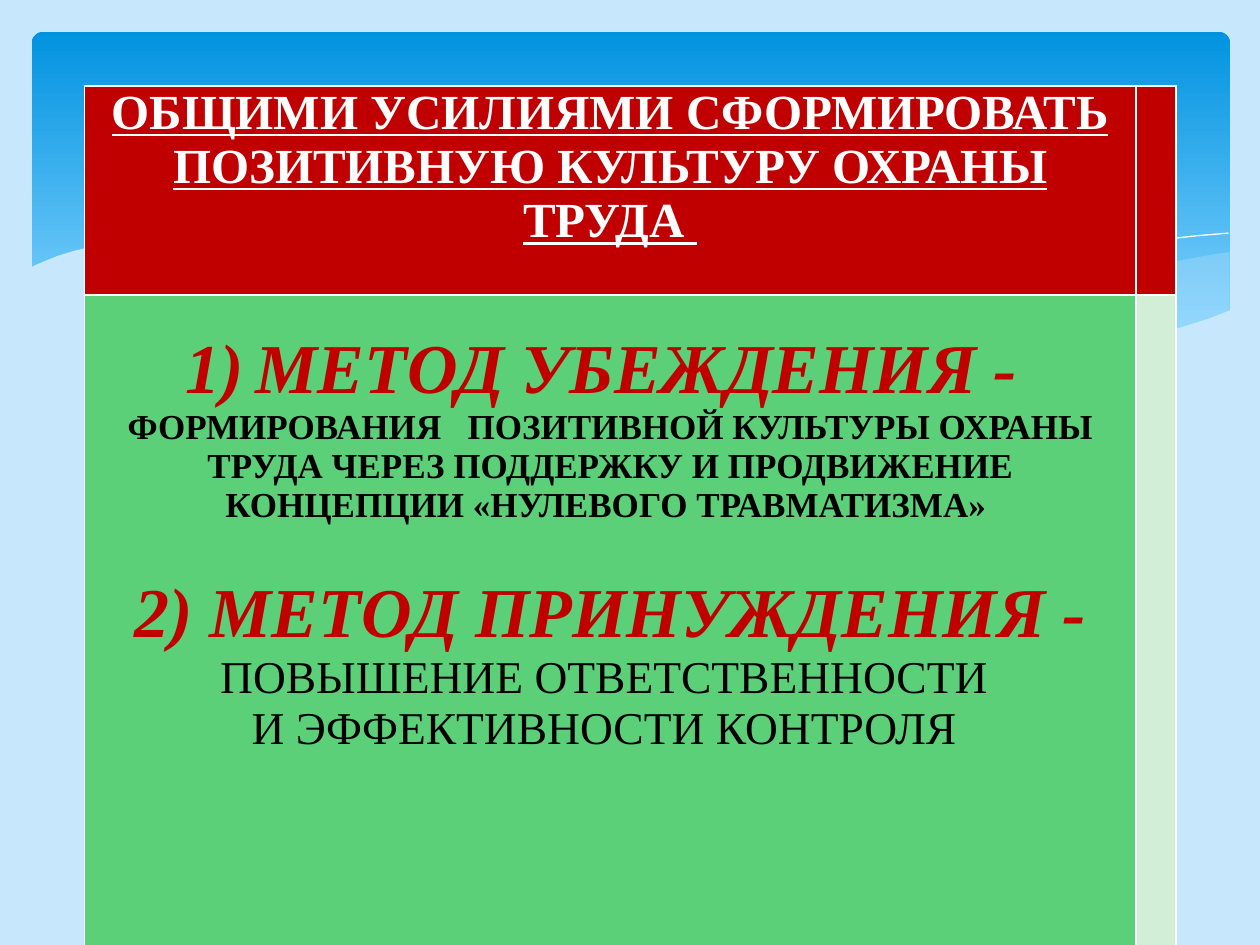
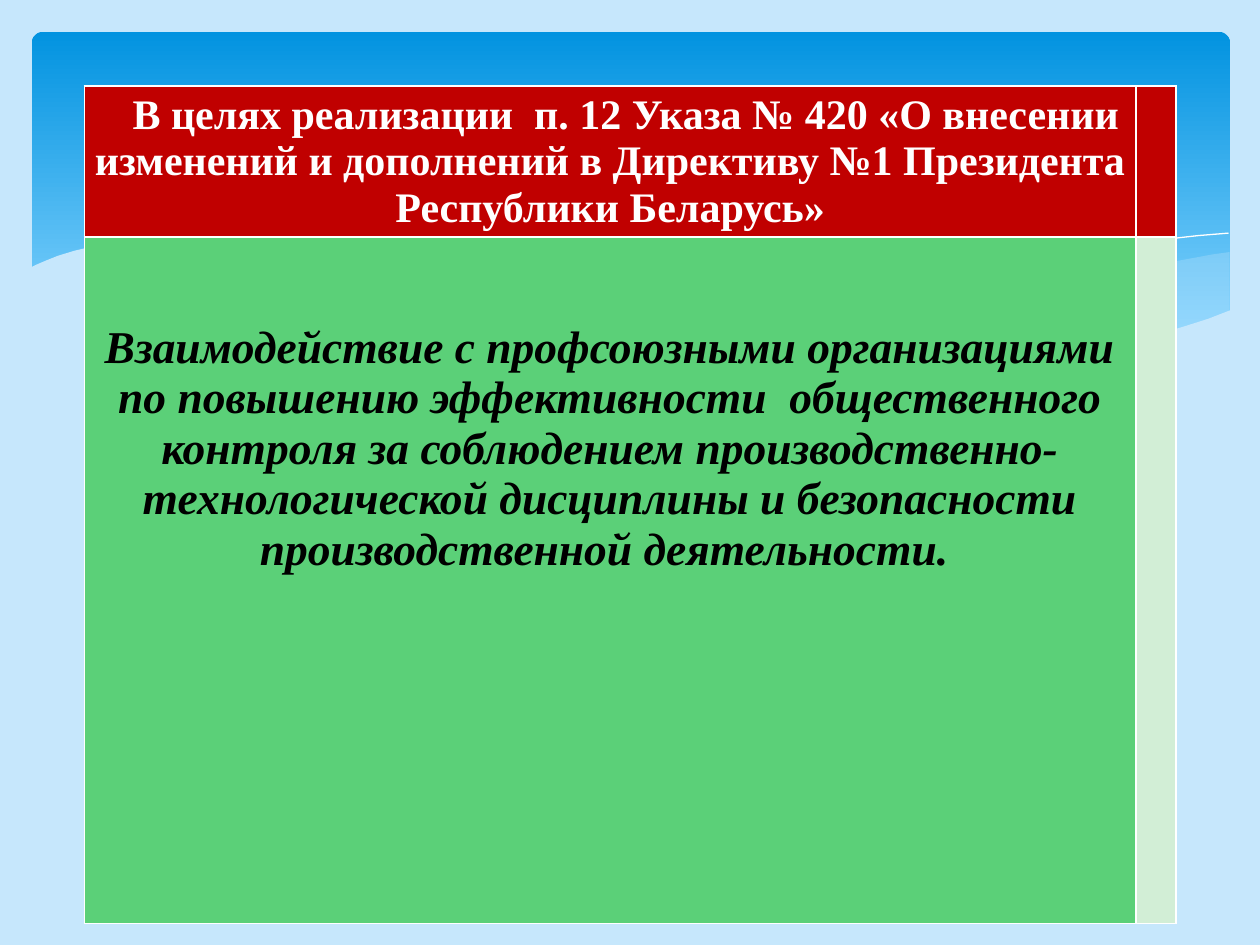
from dataclasses import dataclass

from lxml.etree import SubElement
from pptx import Presentation
from pptx.dml.color import RGBColor
from pptx.enum.shapes import MSO_SHAPE
from pptx.enum.text import MSO_ANCHOR, PP_ALIGN
from pptx.oxml import parse_xml
from pptx.oxml.ns import nsdecls, qn
from pptx.util import Cm, Pt


@dataclass(frozen=True)
class Theme:
    font: str = "Times New Roman"
    sky: str = "C6E7FC"
    band_top: str = "0293E0"
    band_bottom: str = "83D3FE"
    white: str = "FFFFFF"
    black: str = "000000"
    red: str = "C00000"
    green: str = "5BD078"
    pale_green: str = "D2EED6"
    method_size: int = 40
    heading_size: int = 28
    body_size: int = 26
    decree_size: int = 24
    detail_size: int = 20
    border: int = 1


THEME = Theme()

HEADING = dict(size=THEME.heading_size, color=THEME.white, bold=True, underline=True)
DECREE = dict(size=THEME.decree_size, color=THEME.white, bold=True)
METHOD = dict(size=THEME.method_size, color=THEME.red, bold=True, italic=True)
DETAIL = dict(size=THEME.detail_size, color=THEME.black, bold=True)
BODY = dict(size=THEME.body_size, color=THEME.black)
STATEMENT = dict(size=THEME.body_size, color=THEME.black, bold=True, italic=True)

SLIDES = [
    dict(
        row_heights=(4.22, 13.84),
        body_top=0.72,
        heading=[("ОБЩИМИ УСИЛИЯМИ СФОРМИРОВАТЬ ПОЗИТИВНУЮ КУЛЬТУРУ ОХРАНЫ ТРУДА ", HEADING, {})],
        heading_anchor=MSO_ANCHOR.TOP,
        body=[
            ("МЕТОД УБЕЖДЕНИЯ - ", METHOD, dict(left=1.42, first_line=-1.42, numbered=True)),
            ("ФОРМИРОВАНИЯ   ПОЗИТИВНОЙ КУЛЬТУРЫ ОХРАНЫ ТРУДА ЧЕРЕЗ ПОДДЕРЖКУ И ПРОДВИЖЕНИЕ "
             "КОНЦЕПЦИИ «НУЛЕВОГО ТРАВМАТИЗМА» ", DETAIL, {}),
            ("2) МЕТОД ПРИНУЖДЕНИЯ -", METHOD, dict(space_before=29)),
            ("ПОВЫШЕНИЕ ОТВЕТСТВЕННОСТИ ", BODY, {}),
            ("И ЭФФЕКТИВНОСТИ КОНТРОЛЯ ", BODY, {}),
        ],
    ),
    dict(
        row_heights=(3.05, 13.84),
        body_top=1.73,
        heading=[("В целях реализации  п. 12 Указа № 420 «О внесении изменений и дополнений "
                  "в Директиву №1 Президента Республики Беларусь»", DECREE, dict(first_line=0.63))],
        heading_anchor=MSO_ANCHOR.MIDDLE,
        body=[
            ("Взаимодействие с профсоюзными организациями по повышению эффективности  общественного "
             "контроля за соблюдением производственно-технологической дисциплины и безопасности "
             "производственной деятельности. ", STATEMENT, {}),
        ],
    ),
]

WAVE_UNIT = Cm(0.0254)
WAVES = [
    dict(fill=THEME.sky, opacity=29, points=[
        (976, 200), (962, 202), (935, 207), (906, 213), (876, 220), (832, 230), (779, 242),
        (729, 253), (683, 262), (661, 265), (691, 269), (719, 272), (745, 275), (769, 277),
        (803, 278), (835, 277), (863, 275), (889, 272), (913, 267), (935, 262), (949, 257),
        (963, 252), (976, 247)]),
    dict(fill=THEME.sky, opacity=40, points=[
        (893, 273), (866, 269), (807, 260), (741, 247), (668, 231), (598, 214), (555, 205),
        (514, 198), (465, 191), (420, 187), (380, 185), (344, 186), (313, 188), (286, 191),
        (323, 196), (362, 203), (404, 211), (449, 222), (530, 240), (601, 255), (650, 264),
        (695, 270), (736, 275), (773, 277), (807, 278), (838, 278), (867, 276), (893, 273)]),
    dict(points=[
        (309, 195), (328, 192), (353, 189), (387, 187), (433, 187), (469, 189), (510, 192),
        (556, 197), (608, 204), (665, 213), (727, 226), (795, 241), (869, 261), (907, 272)]),
    dict(points=[
        (613, 257), (653, 246), (695, 235), (748, 223), (806, 210), (866, 199), (895, 194),
        (924, 190), (951, 187), (975, 185)]),
    dict(fill=THEME.sky, opacity=100, points=[
        (977, 246), (959, 253), (940, 259), (920, 265), (899, 269), (875, 273), (850, 275),
        (823, 277), (793, 276), (761, 275), (726, 272), (688, 268), (648, 262), (603, 254),
        (555, 245), (503, 233), (447, 220), (391, 207), (340, 197), (292, 190), (250, 186),
        (211, 184), (177, 184), (146, 185), (119, 187), (95, 191), (76, 195), (59, 199),
        (46, 203), (36, 207), (29, 210), (23, 213), (23, 329), (977, 329)]),
]

TABLE_LEFT, TABLE_TOP = 1.7, 1.73
COLUMN_WIDTHS = (21.2, 0.81)
CELL_FILLS = ((THEME.red, THEME.red), (THEME.green, THEME.pale_green))


def rgb(value):
    return RGBColor.from_string(value)


def add_band(slide):
    band = slide.shapes.add_shape(
        MSO_SHAPE.ROUNDED_RECTANGLE, Cm(0.64), Cm(0.64), Cm(24.16), Cm(6.86))
    band.adjustments[0] = 0.034
    band.shadow.inherit = False
    band.line.fill.background()
    band.fill.gradient()
    band.fill.gradient_angle = 270
    colors = (THEME.band_top, THEME.band_bottom)
    for stop, color, position in zip(band.fill.gradient_stops, colors, (0, 0.9)):
        stop.color.rgb = rgb(color)
        stop.position = position


def add_wave(slide, points, fill=None, opacity=100):
    builder = slide.shapes.build_freeform(*points[0], scale=WAVE_UNIT)
    builder.add_line_segments(points[1:], close=fill is not None)
    wave = builder.convert_to_shape()
    wave.shadow.inherit = False
    if fill is None:
        wave.fill.background()
        wave.line.color.rgb = rgb(THEME.white)
        wave.line.width = Pt(0)
        return
    wave.line.fill.background()
    wave.fill.solid()
    wave.fill.fore_color.rgb = rgb(fill)
    if opacity < 100:
        color = wave._element.spPr.find(qn("a:solidFill"))[0]
        SubElement(color, qn("a:alpha")).set("val", str(opacity * 1000))


def style_cell(cell, fill):
    cell.fill.solid()
    cell.fill.fore_color.rgb = rgb(fill)
    cell.margin_left = cell.margin_right = Cm(0.15)
    cell.margin_top = cell.margin_bottom = 0
    properties = cell._tc.get_or_add_tcPr()
    for index, side in enumerate("LRTB"):
        properties.insert(index, parse_xml(
            f'<a:ln{side} {nsdecls("a")} w="{Pt(THEME.border)}"><a:solidFill>'
            f'<a:srgbClr val="{THEME.white}"/></a:solidFill></a:ln{side}>'))


def write_paragraph(paragraph, text, style, left=0, first_line=0, space_before=0, numbered=False):
    paragraph.text = text
    paragraph.alignment = PP_ALIGN.CENTER
    paragraph.space_before = Pt(space_before)
    properties = paragraph._p.get_or_add_pPr()
    properties.set("marL", str(Cm(left)))
    properties.set("indent", str(Cm(first_line)))
    if numbered:
        SubElement(properties, qn("a:buAutoNum")).set("type", "arabicParenR")
    for run in paragraph.runs:
        run.font.name = THEME.font
        run.font.size = Pt(style["size"])
        run.font.color.rgb = rgb(style["color"])
        run.font.bold = style.get("bold", False)
        run.font.italic = style.get("italic", False)
        run.font.underline = style.get("underline", False)


def write_cell(cell, paragraphs):
    text_frame = cell.text_frame
    for index, (text, style, layout) in enumerate(paragraphs):
        paragraph = text_frame.add_paragraph() if index else text_frame.paragraphs[0]
        write_paragraph(paragraph, text, style, **layout)


def add_message_table(slide, content):
    heights = content["row_heights"]
    table = slide.shapes.add_table(
        len(heights), len(COLUMN_WIDTHS), Cm(TABLE_LEFT), Cm(TABLE_TOP),
        Cm(sum(COLUMN_WIDTHS)), Cm(sum(heights))).table
    table.horz_banding = False
    for column, width in zip(table.columns, COLUMN_WIDTHS):
        column.width = Cm(width)
    for row, height, fills in zip(table.rows, heights, CELL_FILLS):
        row.height = Cm(height)
        for cell, fill in zip(row.cells, fills):
            style_cell(cell, fill)
    heading, body = table.cell(0, 0), table.cell(1, 0)
    heading.vertical_anchor = content["heading_anchor"]
    body.margin_top = Cm(content["body_top"])
    write_cell(heading, content["heading"])
    write_cell(body, content["body"])


def main():
    presentation = Presentation()
    presentation.slide_width, presentation.slide_height = Cm(25.4), Cm(19.05)
    background = presentation.slide_master.background.fill
    background.solid()
    background.fore_color.rgb = rgb(THEME.sky)
    for content in SLIDES:
        slide = presentation.slides.add_slide(presentation.slide_layouts[6])
        add_band(slide)
        for wave in WAVES:
            add_wave(slide, **wave)
        add_message_table(slide, content)
    presentation.save("out.pptx")


if __name__ == "__main__":
    main()
